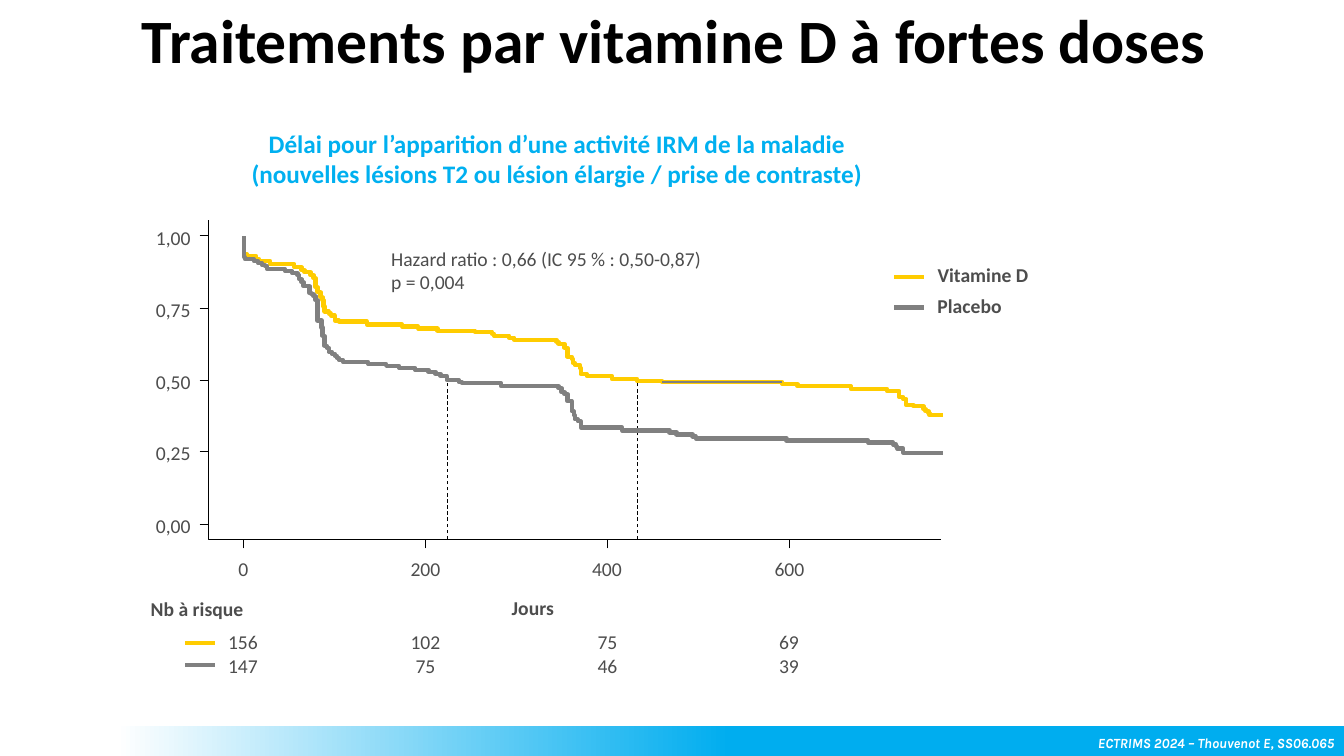
"""Builds the slide on time to MRI activity under high-dose vitamin D."""
import copy

import pptx
import pptx.dml.color
import pptx.enum.dml
import pptx.enum.shapes
import pptx.enum.text
import pptx.oxml
import pptx.util

EMU_PER_PX = 9144
COLORS = {
    "black": "000000", "white": "FFFFFF", "text": "4D4D4D", "heading": "00B0F0",
    "footer": "00ADEF", "vitamin": "FFCC00", "placebo": "808080",
}
AXIS_LEFT, AXIS_TOP, AXIS_RIGHT, AXIS_BOTTOM = 207, 218, 933, 535
TICK = 9
DAYS = ["0", "200", "400", "600"]
AT_RISK = ["156\n147", "102\n75", "75\n46", "69\n39"]
PROBABILITIES = ["0,00", "0,25", "0,50", "0,75", "1,00"]
VITAMIN_STEPS = [
    (935, 412), (922, 410), (921, 408), (918, 406), (916, 403), (906, 402),
    (899, 396), (896, 394), (892, 388), (880, 386), (844, 383), (791, 381),
    (776, 379), (657, 378), (632, 376), (607, 373), (582, 371), (576, 365),
    (575, 362), (570, 360), (568, 356), (567, 354), (563, 345), (560, 341),
    (554, 339), (552, 337), (510, 335), (505, 333), (490, 331), (488, 329),
    (471, 328), (434, 326), (415, 324), (399, 322), (364, 319), (336, 318),
    (332, 313), (328, 311), (326, 309), (322, 304), (321, 298), (320, 295),
    (318, 290), (315, 285), (313, 276), (311, 273), (308, 270), (302, 268),
    (299, 265), (292, 262), (268, 259), (257, 257), (254, 254), (245, 252),
    (242, 234),
]
PLACEBO_STEPS = [
    (935, 449), (896, 445), (890, 443), (889, 441), (886, 439), (861, 437),
    (780, 435), (690, 433), (687, 431), (671, 429), (664, 427), (617, 424),
    (576, 418), (573, 416), (570, 412), (569, 408), (567, 398), (563, 391),
    (560, 389), (557, 385), (554, 383), (497, 380), (458, 379), (455, 377),
    (443, 373), (437, 371), (432, 369), (425, 367), (412, 365), (396, 363),
    (383, 361), (365, 359), (340, 357), (336, 355), (334, 353), (332, 351),
    (329, 349), (326, 345), (324, 343), (322, 333), (320, 325), (319, 318),
    (315, 298), (313, 294), (311, 292), (309, 291), (307, 284), (301, 280),
    (299, 277), (297, 273), (295, 271), (290, 269), (283, 267), (265, 264),
    (263, 263), (260, 261), (256, 259), (252, 257), (243, 255), (242, 234),
]


def px(length):
    """Turn px into EMU."""
    return pptx.util.Emu(length * EMU_PER_PX)


def rgb(name):
    """Return a named colour."""
    return pptx.dml.color.RGBColor.from_string(COLORS[name])


def write_text(shape, text, size=14, color="text", font="Calibri", bold=False,
               italic=False, align="LEFT", anchor="TOP", wrap=False, grow=True,
               spacing=None):
    """Put formatted text in a shape, one paragraph per line."""
    frame = shape.text_frame
    frame.word_wrap = wrap
    frame.vertical_anchor = getattr(pptx.enum.text.MSO_ANCHOR, anchor)
    fit = pptx.enum.text.MSO_AUTO_SIZE
    frame.auto_size = fit.SHAPE_TO_FIT_TEXT if grow else fit.NONE
    frame.text = text
    for paragraph in frame.paragraphs:
        paragraph.alignment = getattr(pptx.enum.text.PP_ALIGN, align)
        if spacing:
            paragraph.line_spacing = spacing
        for run in paragraph.runs:
            run.font.name = font
            run.font.size = pptx.util.Pt(size)
            run.font.bold = bold
            run.font.italic = italic
            run.font.color.rgb = rgb(color)


def add_text(slide, left, top, width, height, text, **style):
    """Add a text box."""
    box = slide.shapes.add_textbox(px(left), px(top), px(width), px(height))
    write_text(box, text, **style)


def add_centered(slide, center, top, height, text):
    """Add a figure label centred on a tick, as wide as its digits."""
    width = round(20 + 10.67 * max(map(len, text.split("\n"))))
    add_text(slide, round(center - width / 2), top, width, height, text, align="CENTER")


def set_line(shape, color, weight):
    """Set the colour and weight of an outline."""
    shape.line.color.rgb = rgb(color)
    shape.line.width = pptx.util.Pt(weight)


def add_line(slide, start, end, color="black", weight=0.63, dashed=False):
    """Add a straight line without shadow."""
    line = slide.shapes.add_connector(
        pptx.enum.shapes.MSO_CONNECTOR.STRAIGHT, *map(px, start + end))
    set_line(line, color, weight)
    if dashed:
        line.line.dash_style = pptx.enum.dml.MSO_LINE.DASH
    effects = pptx.oxml.parse_xml(
        '<a:effectLst xmlns:a="http://schemas.openxmlformats.org/drawingml/2006/main"/>')
    line._element.spPr.append(effects)


def add_outline(slide, points, color, weight):
    """Add an open outline through the points."""
    builder = slide.shapes.build_freeform(*points[0], scale=EMU_PER_PX)
    builder.add_line_segments(points[1:], close=False)
    shape = builder.convert_to_shape()
    shape.shadow.inherit = False
    shape.fill.background()
    set_line(shape, color, weight)


def add_survival_curve(slide, steps, color):
    """Add a staircase that moves sideways, then up, at each step."""
    points = [steps[0]]
    for x, y in steps[1:]:
        points += [(x, points[-1][1]), (x, y)]
    add_outline(slide, points, color, 3)


def add_axes(slide):
    """Add axes, ticks, tick labels and numbers at risk."""
    corners = [(AXIS_RIGHT, AXIS_BOTTOM), (AXIS_LEFT, AXIS_BOTTOM), (AXIS_LEFT, AXIS_TOP)]
    add_outline(slide, corners, "black", 0.63)
    for index, (day, counts) in enumerate(zip(DAYS, AT_RISK)):
        x = round(241 + 180.6 * index)
        add_line(slide, (x, AXIS_BOTTOM + TICK), (x, AXIS_BOTTOM))
        add_centered(slide, x, 548, 34, day)
        add_centered(slide, x, 620, 57, counts)
    for index, probability in enumerate(PROBABILITIES):
        y = round(520 - 71.5 * index)
        add_line(slide, (AXIS_LEFT - TICK, y), (AXIS_LEFT, y))
        add_text(slide, 142, y - 15, 57, 34, probability, align="RIGHT")


def add_footer(slide, text):
    """Add the gradient band with the reference."""
    band = slide.shapes.add_shape(
        pptx.enum.shapes.MSO_SHAPE.RECTANGLE, px(115), px(720), px(1218), px(30))
    band.shadow.inherit = False
    band.line.fill.background()
    band.fill.gradient()
    band.fill.gradient_angle = 180
    first = band.fill.gradient_stops[0]._gs
    first.addnext(copy.deepcopy(first))
    stops = [(0, "footer"), (0.5, "footer"), (1, "white")]
    for stop, (position, color) in zip(band.fill.gradient_stops, stops):
        stop.position = position
        stop.color.rgb = rgb(color)
    write_text(band, text, size=10, color="white", font="Karla", bold=True,
               italic=True, align="RIGHT", anchor="BOTTOM", grow=False)


def main():
    """Build and save the slide."""
    presentation = pptx.Presentation()
    presentation.slide_width, presentation.slide_height = px(1333), px(750)
    slide = presentation.slides.add_slide(presentation.slide_layouts[6])
    add_text(slide, 157, 122, 791, 71,
             "Délai pour l’apparition d’une activité IRM de la maladie\v"
             "(nouvelles lésions T2 ou lésion élargie / prise de contraste)",
             size=18, color="heading", bold=True, align="CENTER", wrap=True)
    add_axes(slide)
    for median in (444, 632):
        add_line(slide, (median, AXIS_BOTTOM), (median, 377), dashed=True)
    add_survival_curve(slide, VITAMIN_STEPS, "vitamin")
    add_line(slide, (657, 379), (776, 379), "placebo", 0)
    add_survival_curve(slide, PLACEBO_STEPS, "placebo")
    for color, legend_y, risk_y in (("vitamin", 275, 638), ("placebo", 305, 660)):
        for x, y in ((887, legend_y), (184, risk_y)):
            add_line(slide, (x + 29, y), (x, y), color, 3)
    add_text(slide, 495, 586, 67, 34, "Jours", bold=True, align="CENTER")
    add_text(slide, 135, 587, 121, 34, "Nb à risque", bold=True, align="CENTER")
    add_text(slide, 920, 256, 118, 34, "Vitamine D", bold=True)
    add_text(slide, 920, 287, 93, 34, "Placebo", bold=True)
    add_text(slide, 378, 240, 348, 57,
             "Hazard ratio : 0,66 (IC 95 % : 0,50-0,87)\vp = 0,004")
    add_footer(slide, "ECTRIMS 2024 – Thouvenot E, SS06.065")
    add_text(slide, 131, -29, 1150, 145, "Traitements par vitamine D à fortes doses",
             size=44, color="black", bold=True, anchor="MIDDLE", wrap=True,
             grow=False, spacing=0.9)
    presentation.save("out.pptx")


if __name__ == "__main__":
    main()
